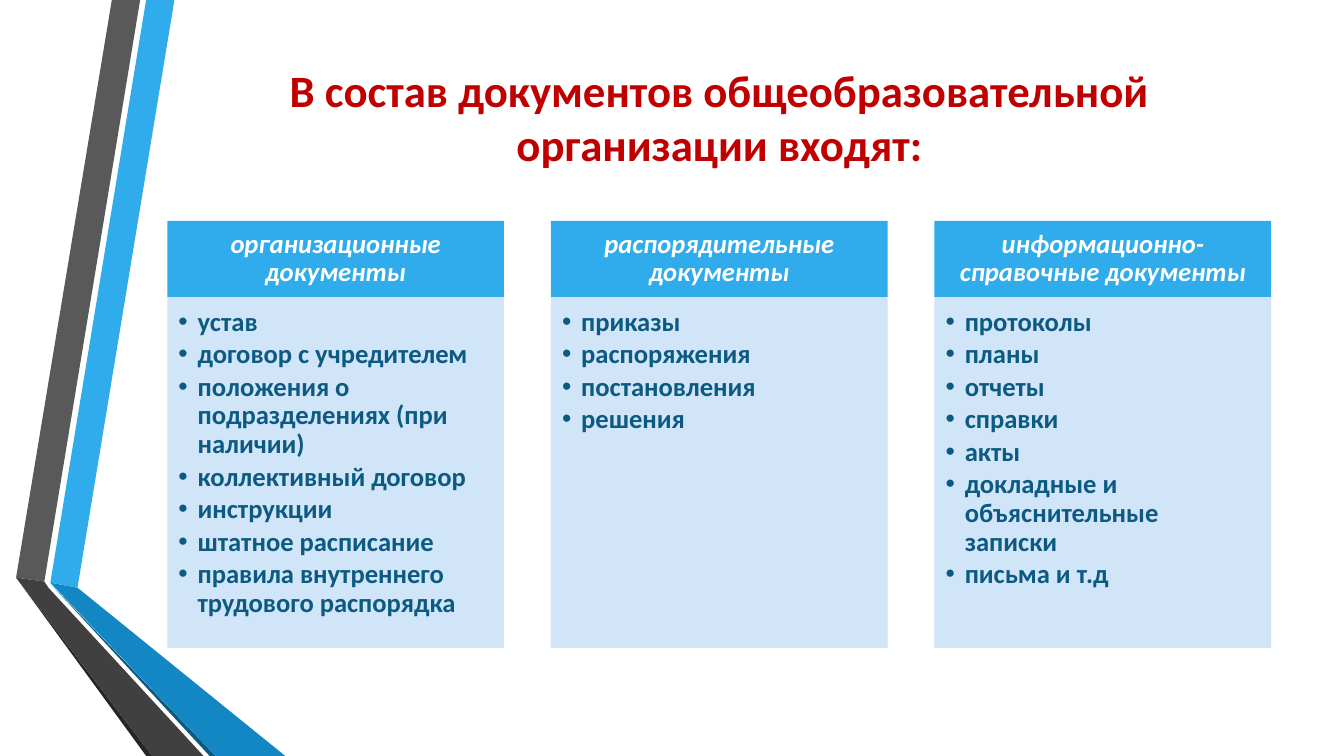
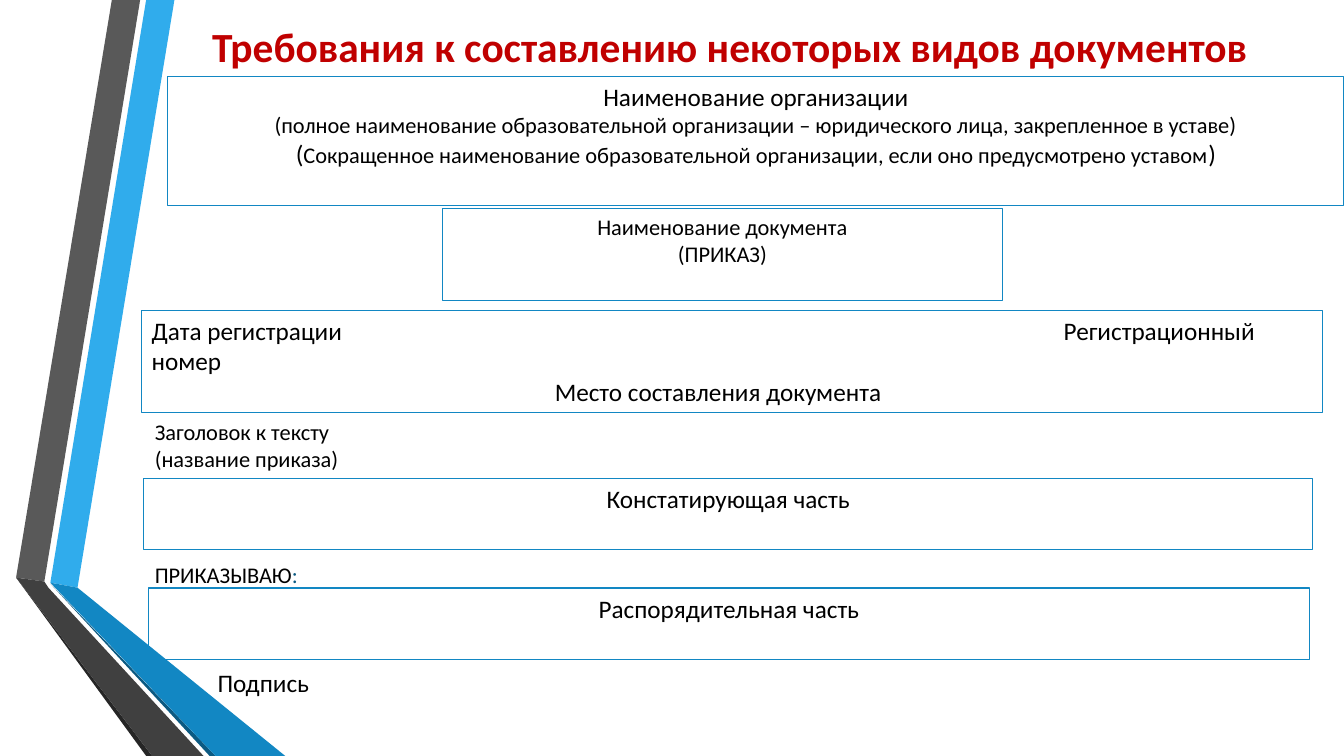
"""Build two slides on school document types and the layout of an order."""
from dataclasses import dataclass

from lxml.etree import SubElement
from pptx import Presentation
from pptx.dml.color import RGBColor as Rgb
from pptx.enum.shapes import MSO_SHAPE as Preset
from pptx.enum.text import MSO_ANCHOR as Anchor, PP_ALIGN as Align
from pptx.oxml.ns import qn
from pptx.util import Pt


@dataclass(frozen=True)
class Theme:
    """Colours, font and type sizes of the deck."""
    font: str = "Calibri"
    heading: str = "C00000"
    text: str = "000000"
    white: str = "FFFFFF"
    sky: str = "30ACEC"
    blue: str = "1287C3"
    navy: str = "0C5A82"
    pale: str = "CDE3F8"
    grey: str = "595959"
    dark: str = "404040"
    black: str = "262626"
    title_size: float = 32
    long_title_size: float = 29.6
    list_size: float = 19
    body_size: float = 18
    small_size: float = 16


THEME = Theme()

RIBBONS = [
    (THEME.sky, [(36, 416.2), (55.4, 419.8), (124.6, 0), (104.4, 0)]),
    (THEME.grey, [(100.1, 0), (79.9, 0), (11.5, 412.6), (31.7, 415.4)]),
    (THEME.black, [(11.5, 412.6), (104.4, 540), (108.7, 540)]),
    (THEME.navy, [(36, 416.9), (149.8, 540), (154.1, 540)]),
    (THEME.blue, [(36, 416.2), (154.1, 540), (203.8, 540), (55.4, 419.8)]),
    (THEME.dark, [(145.4, 540), (34.6, 419.8), (31.7, 415.4), (11.5, 412.6), (108.7, 540)]),
]

DOCUMENT_GROUPS = [
    ("организационные документы", [
        "устав", "договор с учредителем", "положения о подразделениях (при наличии)",
        "коллективный договор", "инструкции", "штатное расписание",
        "правила внутреннего трудового распорядка"]),
    ("распорядительные документы", [
        "приказы", "распоряжения", "постановления", "решения"]),
    ("информационно-справочные документы", [
        "протоколы", "планы", "отчеты", "справки", "акты",
        "докладные и объяснительные записки", "письма и т.д"]),
]


def write(frame, paragraphs, size=THEME.body_size, color=THEME.text, bold=False,
          italic=False, align=Align.LEFT, anchor=Anchor.TOP,
          insets=(7.2, 3.6, 7.2, 3.6), line_spacing=None, space_after=0,
          bullet_indent=0, tabs=()):
    """Fill a text frame; a paragraph is a string or a list of (text, format) runs."""
    frame.word_wrap = True
    frame.vertical_anchor = anchor
    (frame.margin_left, frame.margin_top,
     frame.margin_right, frame.margin_bottom) = map(Pt, insets)
    for index, content in enumerate(paragraphs):
        paragraph = frame.add_paragraph() if index else frame.paragraphs[0]
        paragraph.alignment = align
        paragraph.line_spacing = line_spacing
        paragraph.space_after = Pt(space_after)
        properties = paragraph._p.get_or_add_pPr()
        if bullet_indent:
            properties.set("marL", str(Pt(bullet_indent)))
            properties.set("indent", str(-Pt(bullet_indent)))
            SubElement(properties, qn("a:buFont"), typeface="Arial")
            SubElement(properties, qn("a:buChar"), char="•")
        if tabs:
            stops = SubElement(properties, qn("a:tabLst"))
            SubElement(stops, qn("a:tab"), pos=str(Pt(tabs[index])), algn="l")
        runs = [(content, {})] if isinstance(content, str) else content
        for text, changes in runs:
            run = paragraph.add_run()
            run.text = text
            run.font.name = THEME.font
            run.font.size = Pt(changes.get("size", size))
            run.font.bold = bold
            run.font.italic = italic
            run.font.color.rgb = Rgb.from_string(changes.get("color", color))


class Deck:
    """Hold the presentation and the slide being drawn."""

    def __init__(self, theme):
        self.theme = theme
        self.presentation = Presentation()
        self.presentation.slide_width = Pt(960)
        self.presentation.slide_height = Pt(540)
        self.slide = None

    def new_slide(self):
        blank = self.presentation.slide_layouts[6]
        self.slide = self.presentation.slides.add_slide(blank)
        for color, corners in RIBBONS:
            self.ribbon(color, corners)

    def paint(self, shape, fill=None, line=None, opacity=100):
        shape.shadow.inherit = False
        if fill:
            shape.fill.solid()
            shape.fill.fore_color.rgb = Rgb.from_string(fill)
            if opacity < 100:
                tint = shape.fill._xPr.find(qn("a:solidFill"))[0]
                SubElement(tint, qn("a:alpha"), val=str(opacity * 1000))
        else:
            shape.fill.background()
        if line:
            shape.line.color.rgb = Rgb.from_string(line)
            shape.line.width = Pt(0.75)
        else:
            shape.line.fill.background()

    def ribbon(self, color, corners):
        start, *others = [(Pt(x), Pt(y)) for x, y in corners]
        outline = self.slide.shapes.build_freeform(*start)
        outline.add_line_segments(others, close=True)
        self.paint(outline.convert_to_shape(), fill=color)

    def label(self, place, paragraphs, **style):
        caption = self.slide.shapes.add_textbox(*map(Pt, place))
        write(caption.text_frame, paragraphs, **style)

    def title(self, place, text, size):
        self.label(place, [text], size=size, color=self.theme.heading, bold=True,
                   align=Align.CENTER, anchor=Anchor.MIDDLE)

    def panel(self, place, paragraphs, fill=None, line=None, opacity=100, **style):
        area = self.slide.shapes.add_shape(Preset.RECTANGLE, *map(Pt, place))
        self.paint(area, fill, line, opacity)
        write(area.text_frame, paragraphs, **style)

    def field(self, place, paragraphs, align=Align.CENTER, **style):
        self.panel(place, paragraphs, line=self.theme.blue, align=align, **style)

    def group_column(self, left, heading, documents):
        top, width, heading_height, list_height = 157.7, 240.5, 54.5, 250.6
        shared = {"size": self.theme.list_size, "bold": True, "line_spacing": 0.9}
        self.panel((left, top, width, heading_height), [heading], fill=self.theme.sky,
                   color=self.theme.white, italic=True, align=Align.CENTER,
                   anchor=Anchor.MIDDLE, insets=(10.8, 5.8, 10.8, 5.8), **shared)
        self.panel((left, top + heading_height, width, list_height), documents,
                   fill=self.theme.pale, opacity=90, color=self.theme.navy,
                   insets=(8, 8, 10.8, 12), space_after=2.7, bullet_indent=13.7, **shared)


def add_document_groups(deck):
    deck.new_slide()
    deck.title((119.5, 41.8, 789, 83.5),
               "В состав документов общеобразовательной организации входят:",
               deck.theme.title_size)
    for index, (heading, documents) in enumerate(DOCUMENT_GROUPS):
        deck.group_column(119.5 + 274 * index, heading, documents)


def add_order_layout(deck):
    small = deck.theme.small_size
    deck.new_slide()
    deck.title((127.4, 0, 789, 65.5),
               "Требования к составлению некоторых видов документов",
               deck.theme.long_title_size)
    deck.field((119.9, 54.5, 840, 92.4), [
        "Наименование организации",
        [("(полное наименование образовательной организации – юридического лица, "
          "закрепленное в уставе)", {"size": small})],
        [("(", {}),
         ("Сокращенное наименование образовательной организации, "
          "если оно предусмотрено уставом", {"size": small}),
         (")", {})],
    ])
    deck.field((316, 149, 400, 65.5), ["Наименование документа", "(ПРИКАЗ)"], size=small)
    deck.field((101.2, 221.8, 843.6, 72.7),
               ["Дата регистрации\tРегистрационный номер", "\tМесто составления документа"],
               align=Align.LEFT, tabs=(651.5, 288))
    deck.label((103.5, 295.2, 267, 65.5), ["Заголовок к тексту", "(название приказа)"],
               size=small)
    deck.field((102.8, 341.8, 834.7, 51), ["Констатирующая часть"])
    deck.label((103.5, 396.8, 126, 26.6),
               [[("ПРИКАЗЫВАЮ", {}), (":", {"color": deck.theme.navy})]],
               size=small, anchor=Anchor.MIDDLE)
    deck.field((106, 420, 829.4, 51), ["Распорядительная часть"])
    deck.label((148.3, 473, 123, 51), ["Подпись"])


def main():
    deck = Deck(THEME)
    add_document_groups(deck)
    add_order_layout(deck)
    deck.presentation.save("out.pptx")


if __name__ == "__main__":
    main()
